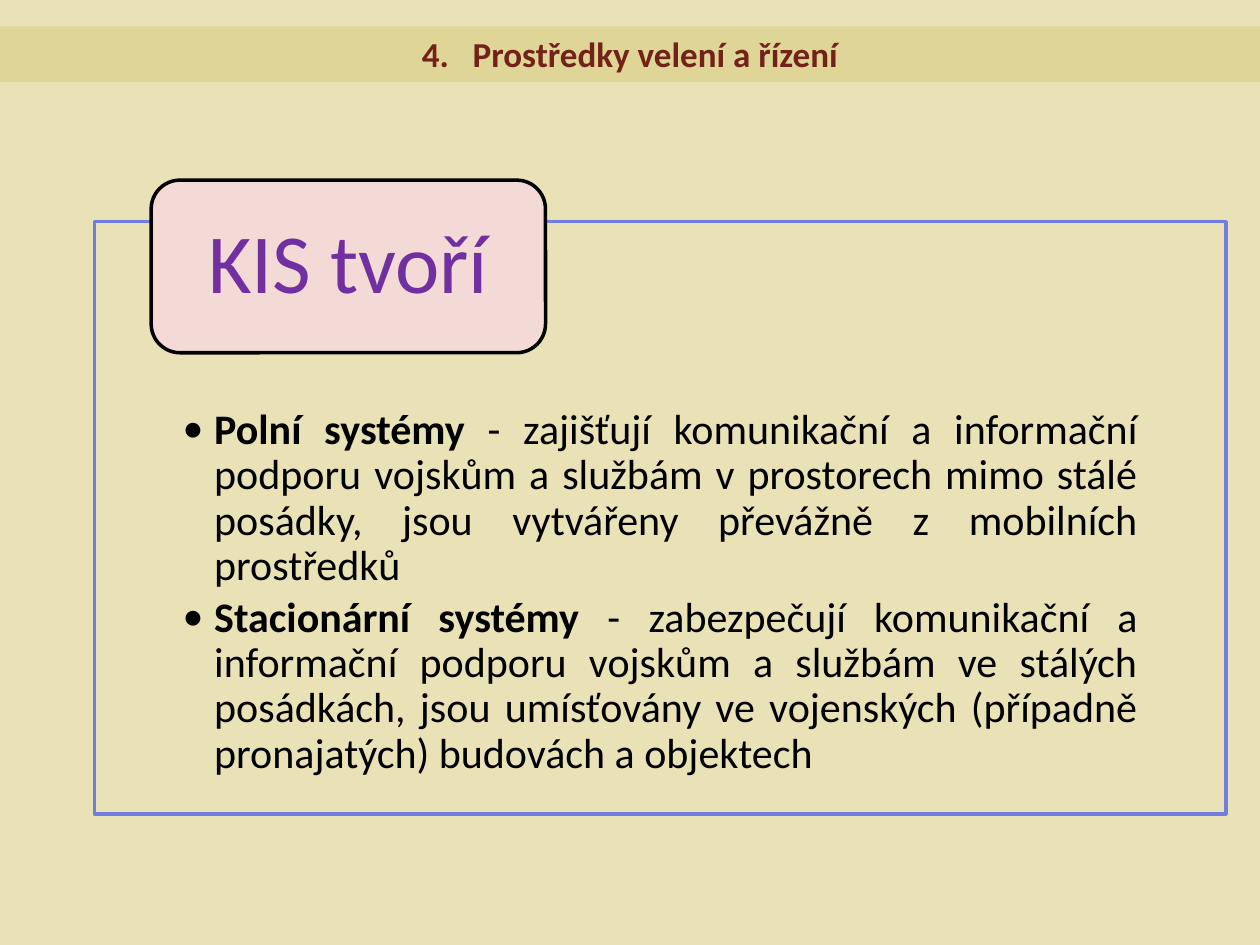
"""Build the slide on command and control means with a framed list."""
from lxml import etree
from pptx import Presentation
from pptx.dml.color import RGBColor
from pptx.enum.shapes import MSO_SHAPE
from pptx.enum.text import MSO_ANCHOR, PP_ALIGN
from pptx.oxml.ns import qn
from pptx.util import Inches, Pt

RECT, ROUND = MSO_SHAPE.RECTANGLE, MSO_SHAPE.ROUNDED_RECTANGLE
CENTER, JUSTIFY = PP_ALIGN.CENTER, PP_ALIGN.JUSTIFY
TOP, MIDDLE = MSO_ANCHOR.TOP, MSO_ANCHOR.MIDDLE
COLORS = {
    "bg": "E9E2B6", "band": "DFD596", "title": "722219", "frame": "727DE0",
    "label": "F3DAD7", "purple": "7030A0", "black": "000000",
}
FRAME = (0.75, 1.76, 8.98, 4.7)
ITEMS = [
    ("Polní systémy ",
     "- zajišťují komunikační a informační podporu vojskům a službám v "
     "prostorech mimo stálé posádky, jsou vytvářeny převážně z mobilních "
     "prostředků"),
    ("Stacionární systémy ",
     "- zabezpečují komunikační a informační podporu vojskům a službám ve "
     "stálých posádkách, jsou umísťovány ve vojenských (případně "
     "pronajatých) budovách a objektech"),
]


def add_box(kind, box, fill, line, insets, anchor):
    s = slide.shapes.add_shape(kind, *map(Inches, box))
    s.shadow.inherit = False
    if fill:
        s.fill.solid()
        s.fill.fore_color.rgb = RGBColor.from_string(COLORS[fill])
    else:
        s.fill.background()
    if line:
        s.line.color.rgb = RGBColor.from_string(COLORS[line])
        s.line.width = Pt(2)
    else:
        s.line.fill.background()
    tf = s.text_frame
    tf.word_wrap = True
    tf.vertical_anchor = anchor
    tf.margin_left, tf.margin_top, tf.margin_right, tf.margin_bottom = map(Inches, insets)
    return s


def add_run(p, text, size, color, bold=False):
    r = p.add_run()
    r.text = text
    r.font.name = "Calibri"
    r.font.size = Pt(size)
    r.font.bold = bold
    r.font.color.rgb = RGBColor.from_string(COLORS[color])
    return r


prs = Presentation()
prs.slide_width, prs.slide_height = Inches(10), Inches(7.5)
slide = prs.slides.add_slide(prs.slide_layouts[6])
slide.background.fill.solid()
slide.background.fill.fore_color.rgb = RGBColor.from_string(COLORS["bg"])

band = add_box(RECT, (0, 0.21, 10, 0.44), "band", None, (0.1, 0.05, 0.1, 0.05), TOP)
p = band.text_frame.paragraphs[0]
p.alignment = CENTER
add_run(p, "4.", 20, "title", True)
gap = add_run(p, " ", 20, "title", True)
gap.font._element.set("spc", "900")
add_run(p, "Prostředky velení a řízení", 20, "title", True)

frame = add_box(RECT, FRAME, "bg", "frame", (0.7, 1.48, 0.7, 0.19), TOP)
color = frame.fill._xPr.find(qn("a:solidFill"))[0]
etree.SubElement(color, qn("a:alpha"), val="90000")
tf = frame.text_frame
for i, (term, text) in enumerate(ITEMS):
    p = tf.add_paragraph() if i else tf.paragraphs[0]
    pPr = p._p.get_or_add_pPr()
    pPr.set("marL", str(Inches(0.25)))
    pPr.set("indent", str(-Inches(0.25)))
    etree.SubElement(pPr, qn("a:buFont"), typeface="Calibri")
    etree.SubElement(pPr, qn("a:buChar"), char="•")
    p.alignment = JUSTIFY
    p.line_spacing = 0.9
    p.space_after = Pt(3.6)
    add_run(p, term, 24, "black", True)
    add_run(p, text, 24, "black")

label = add_box(ROUND, (1.2, 1.43, 3.13, 1.37), "label", "black", (0.3, 0.07, 0.3, 0.07), MIDDLE)
p = label.text_frame.paragraphs[0]
p.alignment = CENTER
p.line_spacing = 0.9
add_run(p, "KIS tvoří", 48, "purple")

prs.save("out.pptx")
